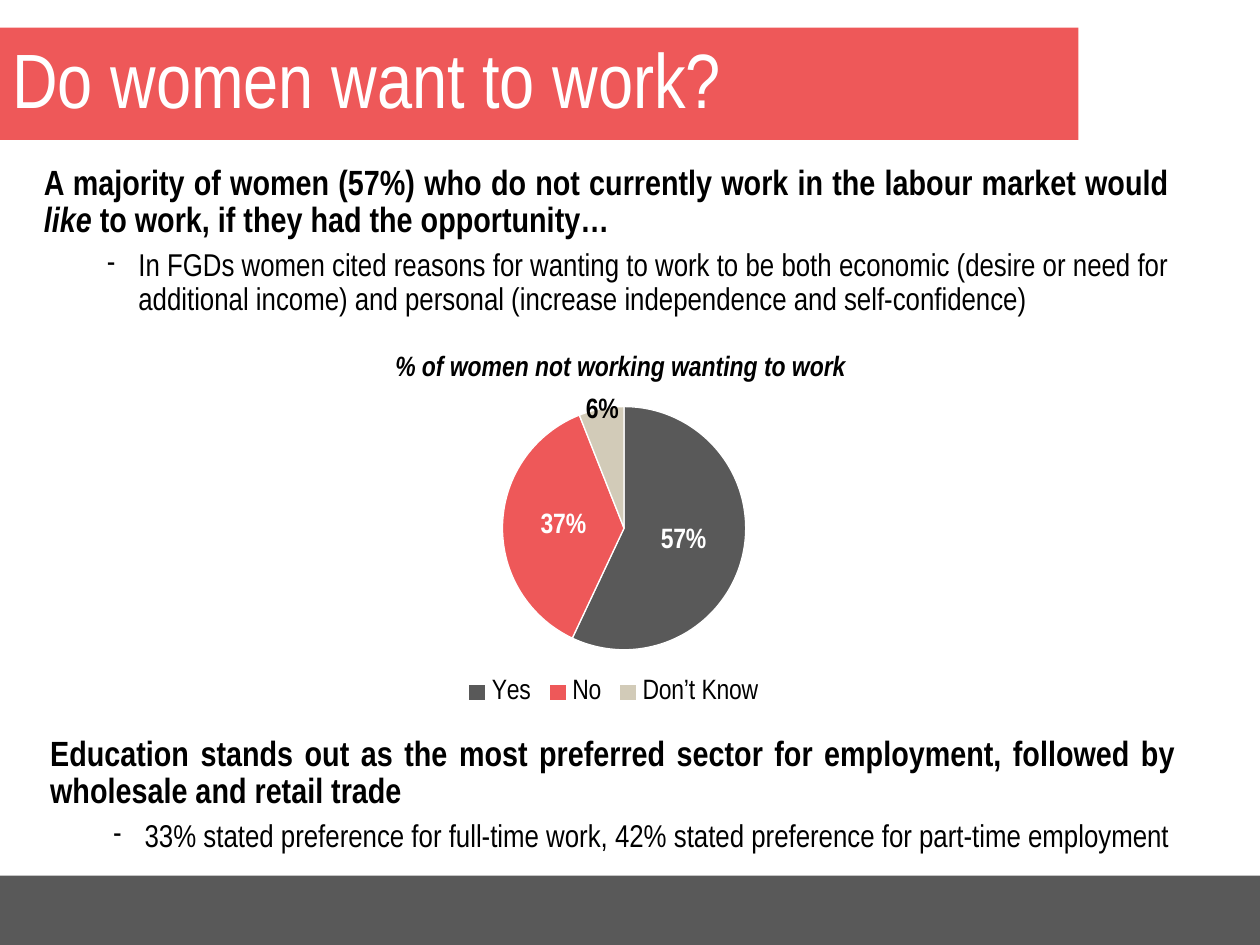
"""Build the slide on women's wish to work, with a pie chart of answers."""
from lxml.etree import SubElement
from pptx import Presentation
from pptx.chart.data import CategoryChartData
from pptx.dml.color import RGBColor
from pptx.enum.chart import XL_CHART_TYPE, XL_LABEL_POSITION, XL_LEGEND_POSITION
from pptx.enum.shapes import MSO_SHAPE
from pptx.enum.text import MSO_ANCHOR, PP_ALIGN
from pptx.oxml import parse_xml
from pptx.oxml.ns import nsdecls, qn
from pptx.util import Inches, Pt

GREY = RGBColor(0x59, 0x59, 0x59)
CORAL = RGBColor(0xEE, 0x58, 0x59)
SAND = RGBColor(0xD2, 0xCB, 0xB8)
WHITE = RGBColor(0xFF, 0xFF, 0xFF)
BLACK = RGBColor(0, 0, 0)
FONT = "Arial Narrow"


class SlideBuilder:
    def __init__(self, page):
        self.page = page

    def style(self, font, size, color=BLACK, bold=False, italic=False):
        font.name, font.size = FONT, Pt(size)
        font.color.rgb = color
        font.bold, font.italic = bold, italic

    def band(self, left, top, width, height, color):
        shape = self.page.shapes.add_shape(
            MSO_SHAPE.RECTANGLE, *map(Inches, (left, top, width, height)))
        shape.shadow.inherit = False
        shape.fill.solid()
        shape.fill.fore_color.rgb = color
        shape.line.fill.background()
        return shape

    def title(self, text, *place):
        frame = self.band(*place, CORAL).text_frame
        frame.text = text
        frame.word_wrap = True
        frame.vertical_anchor = MSO_ANCHOR.MIDDLE
        para = frame.paragraphs[0]
        para.alignment = PP_ALIGN.LEFT
        para.line_spacing = 0.9
        self.style(para.runs[0].font, 44, WHITE)

    def text_box(self, left, top, width, height):
        box = self.page.shapes.add_textbox(*map(Inches, (left, top, width, height)))
        box.text_frame.word_wrap = True
        return box.text_frame

    def caption(self, text, *place):
        frame = self.text_box(*place)
        frame.text = text
        para = frame.paragraphs[0]
        para.alignment = PP_ALIGN.CENTER
        self.style(para.runs[0].font, 16, bold=True, italic=True)

    def finding(self, statement, detail, *place):
        frame = self.text_box(*place)
        head, point = frame.paragraphs[0], frame.add_paragraph()
        for para in (head, point):
            para.alignment = PP_ALIGN.JUSTIFY
            para.line_spacing = 0.9
        for text, italic in statement:
            span = head.add_run()
            span.text = text
            self.style(span.font, 20, bold=True, italic=italic)
        point.text = detail
        point.level = 1
        point.space_before = Pt(5)
        properties = point._p.get_or_add_pPr()
        properties.set("marL", str(Inches(0.75)))
        properties.set("indent", str(Inches(-0.25)))
        SubElement(properties, qn("a:buFont"), typeface=FONT)
        SubElement(properties, qn("a:buChar"), char="-")
        self.style(point.runs[0].font, 18)

    def pie(self, answers, left, top, width, height):
        data = CategoryChartData(number_format="0%")
        data.categories = [name for name, *_ in answers]
        data.add_series("Series 1", [value for _, value, *_ in answers])
        chart = self.page.shapes.add_chart(
            XL_CHART_TYPE.PIE, *map(Inches, (left, top, width, height)), data).chart
        chart.has_title = False
        chart.font.name, chart.font.size = "Calibri", Pt(10)
        chart.font.color.rgb = BLACK
        chart.has_legend = True
        chart.legend.position = XL_LEGEND_POSITION.BOTTOM
        chart.legend.include_in_layout = False
        self.style(chart.legend.font, 16)
        plot = chart.plots[0]
        plot.vary_by_categories = True
        plot.has_data_labels = True
        labels = plot.data_labels
        labels.show_value, labels.show_percentage = True, False
        labels.number_format, labels.number_format_is_linked = "0%", False
        labels.position = XL_LABEL_POSITION.CENTER
        self.style(labels.font, 16, WHITE, bold=True)
        for index, (_, _, color, label_color) in enumerate(answers):
            point = plot.series[0].points[index]
            point.format.fill.solid()
            point.format.fill.fore_color.rgb = color
            point.format.line.color.rgb = WHITE
            point.format.line.width = Pt(0.75)
            self.style(point.data_label.font, 16, label_color, bold=True)
            point.data_label.position = XL_LABEL_POSITION.CENTER
        area = chart._chartSpace.xpath("c:chart/c:plotArea")[0]
        for old in area.xpath("c:layout"):
            area.remove(old)
        area.insert(0, self.layout(
            layoutTarget="inner", xMode="edge", yMode="edge", x=0.02, y=0.05, w=0.98, h=0.76))
        last_label = area.xpath(".//c:ser/c:dLbls/c:dLbl")[-1]
        last_label.insert(1, self.layout(x=-0.01, y=-0.18))

    def layout(self, **settings):
        parts = "".join(f'<c:{name} val="{value}"/>' for name, value in settings.items())
        return parse_xml(f'<c:layout {nsdecls("c")}><c:manualLayout>{parts}'
                         '</c:manualLayout></c:layout>')


def main():
    deck = Presentation()
    deck.slide_width, deck.slide_height = Inches(10), Inches(7.5)
    builder = SlideBuilder(deck.slides.add_slide(deck.slide_layouts[6]))
    builder.band(0, 6.95, 10, 0.55, GREY)
    builder.title("Do women want to work?", 0, 0.22, 8.56, 0.89)
    builder.finding(
        [("A majority of women (57%) who do not currently work in the labour market would ", False),
         ("like", True),
         (" to work, if they had the opportunity…", False)],
        "In FGDs women cited reasons for wanting to work to be both economic (desire or need "
        "for additional income) and personal (increase independence and self-confidence)",
        0.25, 1.26, 9.13, 1.46)
    builder.caption("% of women not working wanting to work", 2.51, 2.72, 4.83, 0.37)
    builder.pie(
        [("Yes", 0.57, GREY, WHITE), ("No", 0.37, CORAL, WHITE),
         ("Don’t Know", 0.06, SAND, BLACK)],
        0.7, 3.1, 8.34, 2.54)
    builder.finding(
        [("Education stands out as the most preferred sector for employment, "
          "followed by wholesale and retail trade", False)],
        "33% stated preference for full-time work, 42% stated preference for part-time employment",
        0.3, 5.79, 9.13, 1.29)
    deck.save("out.pptx")


if __name__ == "__main__":
    main()
